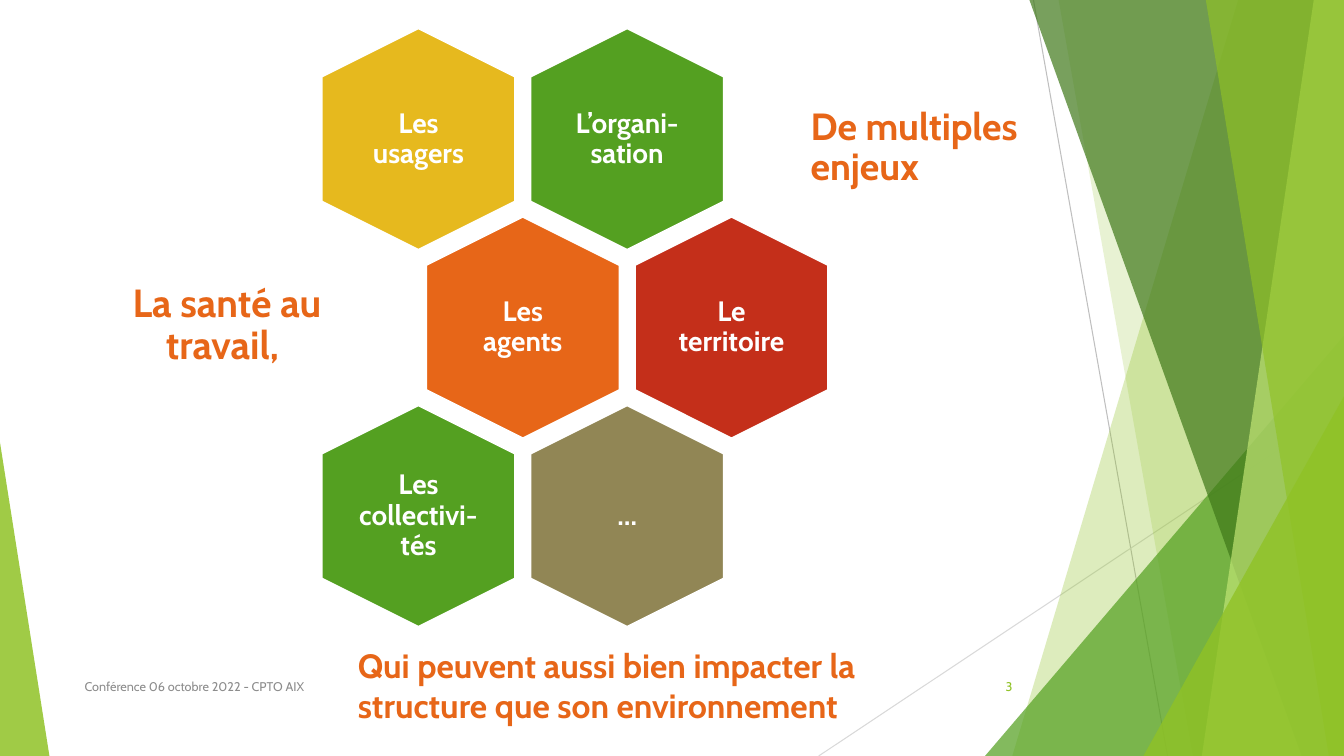
from dataclasses import dataclass

import lxml.etree
import pptx
import pptx.dml.color
import pptx.enum.shapes
import pptx.enum.text
import pptx.oxml.ns
import pptx.util

Inches = pptx.util.Inches
RGBColor = pptx.dml.color.RGBColor
Shape = pptx.enum.shapes.MSO_SHAPE
Align = pptx.enum.text.PP_ALIGN
Anchor = pptx.enum.text.MSO_ANCHOR
qn = pptx.oxml.ns.qn

WHITE = RGBColor(0xFF, 0xFF, 0xFF)
LIME = RGBColor(0x90, 0xC2, 0x26)
GREEN = RGBColor(0x54, 0xA0, 0x21)
FOREST = RGBColor(0x3F, 0x78, 0x19)
PALE = RGBColor(0xC0, 0xE4, 0x74)
GOLD = RGBColor(0xE6, 0xB9, 0x1E)
ORANGE = RGBColor(0xE7, 0x66, 0x18)
RED = RGBColor(0xC4, 0x2F, 0x1A)
OLIVE = RGBColor(0x91, 0x86, 0x55)
GREY = RGBColor(0x8C, 0x8C, 0x8C)
SILVER = RGBColor(0xBF, 0xBF, 0xBF)
MIST = RGBColor(0xD9, 0xD9, 0xD9)

WIDTH, HEIGHT = 13.33, 7.5
FONT = "Cabin"
HEX_LONG, HEX_SHORT = 2.2, 1.92
TEXT_WIDE, TEXT_HIGH = 1.32, 1.52
LEFT_X, TOP_Y = 4.15, 1.38
STEP_X, STEP_Y = 2.07, 1.87


@dataclass
class Ray:
    start: tuple[float, float]
    end: tuple[float, float]
    color: RGBColor


@dataclass
class Band:
    top: float
    base: float
    color: RGBColor
    alpha: int


@dataclass
class Wedge:
    left: float
    top: float
    width: float
    tip: float
    color: RGBColor
    alpha: int


@dataclass
class Cell:
    row: int
    col: int
    text: str
    color: RGBColor
    inset: float


@dataclass
class Label:
    text: str
    box: tuple[float, float, float, float]
    size: float
    color: RGBColor
    bold: bool = True
    align: Align = Align.LEFT
    anchor: Anchor = Anchor.MIDDLE
    inset: tuple[float, float] = (0.1, 0.05)
    pitch: float = 1.0


RAYS = [
    Ray((10.25, 0), (11.58, HEIGHT), SILVER),
    Ray((WIDTH, 4.03), (8.12, HEIGHT), MIST),
]
DECOR = [
    Band(12.28, 10.04, LIME, 30),
    Band(10.5, 11.83, LIME, 20),
    Wedge(9.77, 3.33, 3.56, 1, GREEN, 72),
    Band(10.21, 12.91, FOREST, 70),
    Band(13.03, 11.92, PALE, 70),
    Band(11.96, 13.18, LIME, 65),
    Wedge(11.34, 3.93, 1.99, 1, LIME, 80),
    Wedge(0, 4.39, 0.49, 0, LIME, 85),
]
CELLS = [
    Cell(0, 1, "L’organi-sation", GREEN, 0.08),
    Cell(0, 0, "Les usagers", GOLD, 0),
    Cell(1, 0, "Les agents", ORANGE, 0.08),
    Cell(1, 1, "Le territoire", RED, 0),
    Cell(2, 1, "…", OLIVE, 0.08),
    Cell(2, 0, "Les collectivi-tés", GREEN, 0),
]
LABELS = [
    Label("Conférence 06 octobre 2022 - CPTO AIX", (0.74, 6.61, 6.89, 0.4), 9, GREY, bold=False),
    Label("3", (9.39, 6.61, 0.75, 0.4), 9, LIME, bold=False, align=Align.RIGHT),
    Label("De multiples enjeux", (7.93, 0.81, 2.46, 1.32), 27, ORANGE,
          inset=(0.11, 0.11), pitch=0.9),
    Label("La santé au travail, ", (1.06, 2.57, 2.38, 1.32), 28, ORANGE,
          align=Align.CENTER, inset=(0.12, 0.12), pitch=0.9),
    Label("Qui peuvent aussi bien impacter la structure que son environnement",
          (3.45, 6.35, 5.81, 0.91), 24, ORANGE, anchor=Anchor.TOP),
]


def draw_ray(slide, ray: Ray) -> None:
    ends = [Inches(n) for n in ray.start + ray.end]
    line = slide.shapes.add_connector(pptx.enum.shapes.MSO_CONNECTOR.STRAIGHT, *ends)
    line.line.color.rgb = ray.color
    line.line.width = pptx.util.Pt(0.75)
    lxml.etree.SubElement(line._element.spPr, qn("a:effectLst"))


def tint(shape, color: RGBColor, alpha: int) -> None:
    shape.shadow.inherit = False
    shape.fill.solid()
    shape.fill.fore_color.rgb = color
    shape.line.fill.background()
    tone = shape._element.spPr.find(qn("a:solidFill"))[0]
    lxml.etree.SubElement(tone, qn("a:alpha")).set("val", str(alpha * 1000))


def draw_band(slide, band: Band) -> None:
    points = [(WIDTH, 0), (WIDTH, HEIGHT), (band.base, HEIGHT)]
    form = slide.shapes.build_freeform(Inches(band.top), 0)
    form.add_line_segments([(Inches(x), Inches(y)) for x, y in points], close=True)
    tint(form.convert_to_shape(), band.color, band.alpha)


def draw_wedge(slide, wedge: Wedge) -> None:
    box = (wedge.left, wedge.top, wedge.width, HEIGHT - wedge.top)
    shape = slide.shapes.add_shape(Shape.ISOSCELES_TRIANGLE, *map(Inches, box))
    shape.adjustments[0] = wedge.tip
    tint(shape, wedge.color, wedge.alpha)


def draw_label(slide, label: Label) -> None:
    frame = slide.shapes.add_textbox(*map(Inches, label.box)).text_frame
    frame.word_wrap = True
    frame.vertical_anchor = label.anchor
    frame.margin_left = frame.margin_right = Inches(label.inset[0])
    frame.margin_top = frame.margin_bottom = Inches(label.inset[1])
    para = frame.paragraphs[0]
    para.text = label.text
    para.alignment = label.align
    para.line_spacing = label.pitch
    para.font.name = FONT
    para.font.size = pptx.util.Pt(label.size)
    para.font.bold = label.bold
    para.font.color.rgb = label.color


def draw_cell(slide, cell: Cell) -> None:
    x = LEFT_X + STEP_X * (cell.col + cell.row % 2 / 2)
    y = TOP_Y + STEP_Y * cell.row
    box = (x - HEX_LONG / 2, y - HEX_SHORT / 2, HEX_LONG, HEX_SHORT)
    shape = slide.shapes.add_shape(Shape.HEXAGON, *map(Inches, box))
    shape.adjustments[0] = 0.25
    shape.rotation = 90
    shape.shadow.inherit = False
    shape.fill.solid()
    shape.fill.fore_color.rgb = cell.color
    shape.line.color.rgb = WHITE
    shape.line.width = pptx.util.Pt(1.5)
    area = (x - TEXT_WIDE / 2, y - TEXT_HIGH / 2, TEXT_WIDE, TEXT_HIGH)
    draw_label(slide, Label(cell.text, area, 20, WHITE, align=Align.CENTER,
                            inset=(cell.inset, cell.inset), pitch=0.9))


def main() -> None:
    deck = pptx.Presentation()
    deck.slide_width, deck.slide_height = Inches(WIDTH), Inches(HEIGHT)
    slide = deck.slides.add_slide(deck.slide_layouts[6])
    for ray in RAYS:
        draw_ray(slide, ray)
    for part in DECOR:
        if isinstance(part, Band):
            draw_band(slide, part)
        else:
            draw_wedge(slide, part)
    for cell in CELLS:
        draw_cell(slide, cell)
    for label in LABELS:
        draw_label(slide, label)
    deck.save("out.pptx")


if __name__ == "__main__":
    main()
